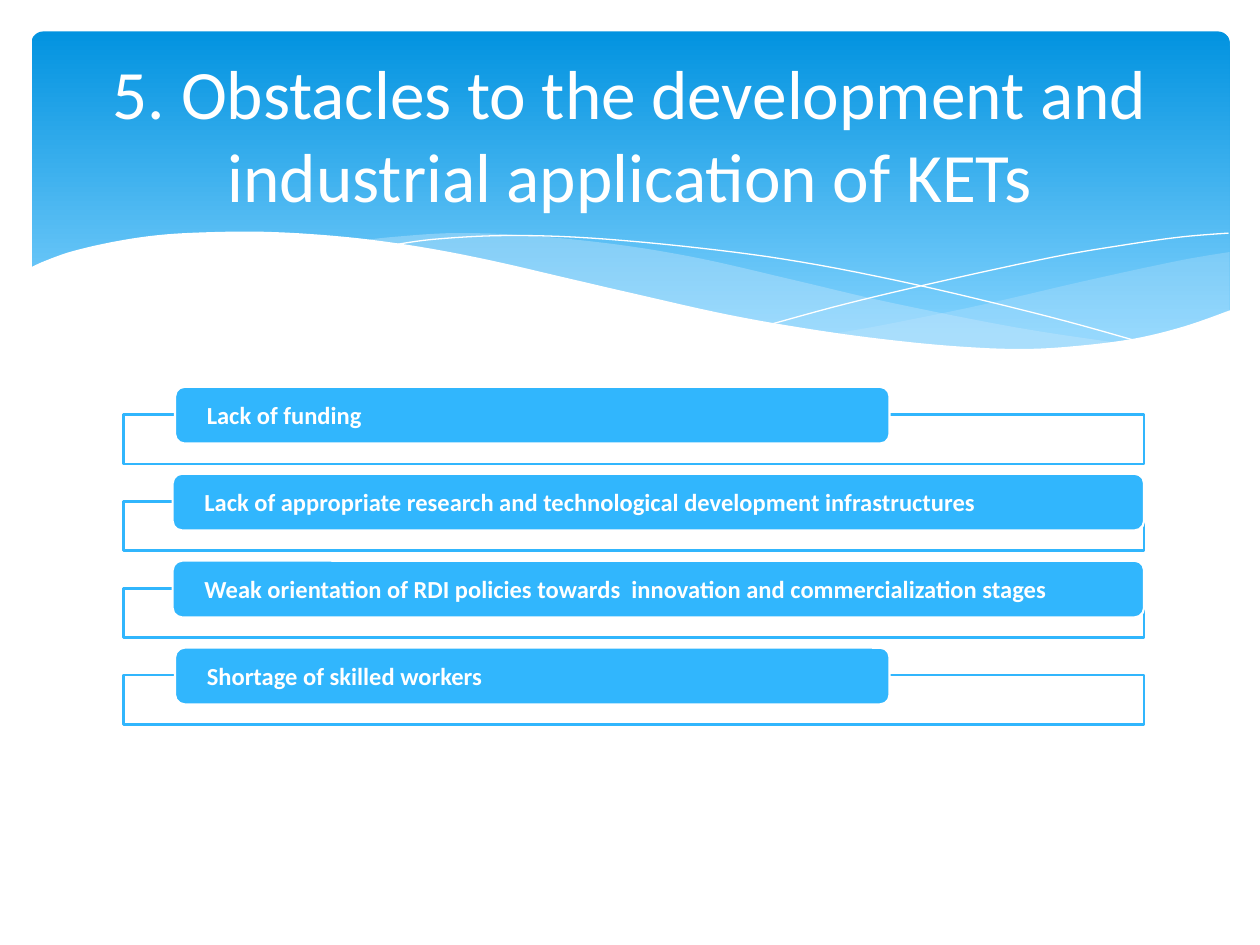
from lxml import etree
from pptx import Presentation
from pptx import util as u
from pptx.dml.color import RGBColor
from pptx.enum import shapes, text
from pptx.oxml.ns import qn

WHITE = RGBColor(0xFF, 0xFF, 0xFF)
SKY = RGBColor(0x31, 0xB6, 0xFD)
DEEP_BLUE = RGBColor(0x02, 0x93, 0xE0)
LIGHT_BLUE = RGBColor(0x83, 0xD3, 0xFE)
PALE_BLUE = RGBColor(0xC6, 0xE7, 0xFC)


def smooth(anchors, steps=6):
    padded = [anchors[0], *anchors, anchors[-1]]
    curve = [anchors[0]]
    for a, b, c, d in zip(padded, padded[1:], padded[2:], padded[3:]):
        for step in range(1, steps + 1):
            t = step / steps
            curve.append(tuple(
                0.5 * (2 * q + (r - p) * t + (2 * p - 5 * q + 4 * r - s) * t ** 2
                       + (3 * q - p - 3 * r + s) * t ** 3)
                for p, q, r, s in zip(a, b, c, d)))
    return curve


class SlideKit:
    font = "Calibri"

    def __init__(self, slide):
        self.slide = slide

    def paint(self, shape, fill=None, opacity=100, line=None, width=1.25):
        shape.shadow.inherit = False
        if fill is None:
            shape.fill.background()
        else:
            shape.fill.solid()
            shape.fill.fore_color.rgb = fill
            if opacity < 100:
                color = shape.element.spPr.find(qn("a:solidFill"))[0]
                etree.SubElement(color, qn("a:alpha"), val=str(opacity * 1000))
        if line is None:
            shape.line.fill.background()
        else:
            shape.line.color.rgb = line
            shape.line.width = u.Pt(width)

    def box(self, kind, left, top, width, height, **look):
        shape = self.slide.shapes.add_shape(
            kind, *map(u.Inches, (left, top, width, height)))
        self.paint(shape, **look)
        return shape

    def banner(self, left, top, width, height):
        banner = self.box(shapes.MSO_SHAPE.ROUNDED_RECTANGLE, left, top, width, height)
        banner.adjustments[0] = 0.034
        banner.fill.gradient()
        banner.fill.gradient_angle = 270
        stops = zip(banner.fill.gradient_stops, (0, 0.9), (DEEP_BLUE, LIGHT_BLUE))
        for stop, position, color in stops:
            stop.position = position
            stop.color.rgb = color

    def wave(self, points, closed=True, **look):
        start, *rest = [(u.Inches(x), u.Inches(y)) for x, y in points]
        outline = self.slide.shapes.build_freeform(*start)
        outline.add_line_segments(rest, close=closed)
        self.paint(outline.convert_to_shape(), **look)

    def letter(self, shape, words, size, align, bold=False):
        frame = shape.text_frame
        frame.text = words
        frame.word_wrap = True
        frame.vertical_anchor = text.MSO_ANCHOR.MIDDLE
        paragraph = frame.paragraphs[0]
        paragraph.alignment = align
        font = paragraph.runs[0].font
        font.name, font.size, font.bold = self.font, u.Pt(size), bold
        font.color.rgb = WHITE

    def title(self, words, left, top, width, height):
        heading = self.slide.shapes.add_textbox(
            *map(u.Inches, (left, top, width, height)))
        self.letter(heading, words, 39.6, text.PP_ALIGN.CENTER)

    def obstacle(self, words, top, left, width):
        self.box(shapes.MSO_SHAPE.RECTANGLE, 0.98, top + 0.22, 8.1, 0.39,
                 fill=WHITE, opacity=90, line=SKY)
        label = self.box(shapes.MSO_SHAPE.ROUNDED_RECTANGLE, left, top, width, 0.45,
                         fill=SKY, line=WHITE)
        frame = label.text_frame
        frame.margin_left = frame.margin_right = u.Inches(0.23)
        frame.margin_top = frame.margin_bottom = 0
        self.letter(label, words, 14, text.PP_ALIGN.LEFT, bold=True)


def draw_header(kit):
    kit.banner(0.25, 0.25, 9.51, 2.7)

    right_crest = smooth([(9.76, 2), (9.35, 2.07), (8.61, 2.23), (7.79, 2.42),
                          (7.06, 2.57), (6.61, 2.65)])
    right_base = smooth([(6.61, 2.65), (7.05, 2.71), (7.57, 2.76), (8.03, 2.78),
                         (8.54, 2.76), (9.05, 2.69), (9.42, 2.59), (9.76, 2.47)])
    kit.wave(right_crest + right_base, fill=PALE_BLUE, opacity=29)

    middle_crest = smooth([(8.93, 2.73), (8.07, 2.6), (7.06, 2.4), (6.29, 2.22),
                           (5.55, 2.05), (4.89, 1.94), (4.2, 1.87), (3.61, 1.85),
                           (3.13, 1.88), (2.86, 1.91)])
    middle_base = smooth([(2.86, 1.91), (3.42, 1.99), (4.04, 2.11), (4.91, 2.32),
                          (5.66, 2.48), (6.34, 2.61), (6.95, 2.7), (7.48, 2.76),
                          (7.96, 2.78), (8.48, 2.77), (8.93, 2.73)])
    kit.wave(middle_crest + middle_base, fill=PALE_BLUE, opacity=40)

    falling_line = [(3.09, 1.95), (3.44, 1.9), (4.01, 1.87), (4.69, 1.89),
                    (5.56, 1.97), (6.36, 2.08), (7.27, 2.26), (8.31, 2.51), (9.07, 2.72)]
    rising_line = [(6.13, 2.57), (6.72, 2.41), (7.48, 2.23), (8.36, 2.04),
                   (8.95, 1.94), (9.38, 1.88), (9.75, 1.85)]
    for strand in (falling_line, rising_line):
        kit.wave(smooth(strand), closed=False, line=WHITE, width=0)

    white_crest = smooth([(9.77, 2.46), (9.4, 2.59), (8.99, 2.69), (8.5, 2.75),
                          (8.09, 2.77), (7.61, 2.75), (7.08, 2.7), (6.48, 2.62),
                          (5.79, 2.5), (5.03, 2.33), (4.47, 2.2), (3.91, 2.07),
                          (3.4, 1.97), (2.92, 1.9), (2.5, 1.86), (2.11, 1.84),
                          (1.77, 1.84), (1.32, 1.86), (0.95, 1.91), (0.59, 1.99),
                          (0.36, 2.07), (0.23, 2.13)])
    kit.wave(white_crest + [(0.23, 3.29), (9.77, 3.29)], fill=WHITE)


def main():
    deck = Presentation()
    deck.slide_width, deck.slide_height = u.Inches(10), u.Inches(7.5)
    kit = SlideKit(deck.slides.add_slide(deck.slide_layouts[6]))

    draw_header(kit)
    kit.title("5. Obstacles to the development and industrial application of KETs",
              0.5, 0.37, 9, 1.37)

    short, long = (1.39, 5.67), (1.37, 7.71)
    obstacles = [
        ("Lack of funding", short),
        ("Lack of appropriate research and technological development infrastructures", long),
        ("Weak orientation of RDI policies towards  innovation and commercialization stages",
         long),
        ("Shortage of skilled workers", short),
    ]
    for row, (words, (left, width)) in enumerate(obstacles):
        kit.obstacle(words, 3.07 + row * 0.69, left, width)

    deck.save("out.pptx")


if __name__ == "__main__":
    main()
